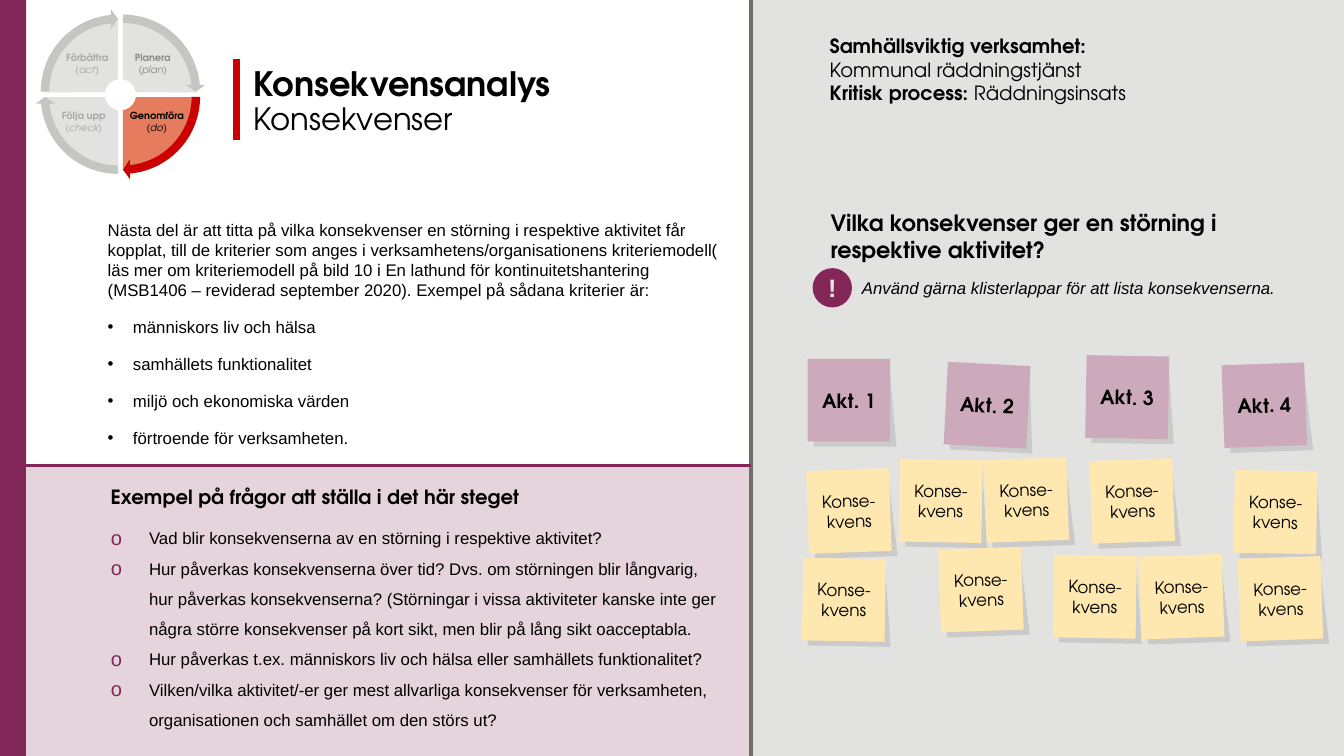
import math

import lxml.etree
import pptx
import pptx.dml.color
import pptx.enum.shapes
import pptx.enum.text
import pptx.oxml.ns
import pptx.util

Inches = pptx.util.Inches
SHAPES = pptx.enum.shapes.MSO_SHAPE
CENTER = pptx.enum.text.PP_ALIGN.CENTER
DISPLAY, BODY = "TeX Gyre Adventor", "Arial"
PLUM, RED, PALE, BLACK = "822757", "CC0000", "E2E2E1", "000000"
BOLD, PLAIN, ITALIC = (True, False), (False, False), (False, True)


def color(hex_value):
    """Turn a hex string into a colour."""
    return pptx.dml.color.RGBColor.from_string(hex_value)


def add_element(parent, tag, **attributes):
    """Append a drawing element to its parent."""
    element = lxml.etree.SubElement(parent, pptx.oxml.ns.qn(tag))
    for name, value in attributes.items():
        element.set(name, str(value))
    return element


def paint(shape, fill, opacity=100):
    """Give a shape a flat fill without line or shadow."""
    shape.shadow.inherit = False
    shape.line.fill.background()
    shape.fill.solid()
    shape.fill.fore_color.rgb = color(fill)
    if opacity < 100:
        value = shape._element.spPr.find(".//" + pptx.oxml.ns.qn("a:srgbClr"))
        add_element(value, "a:alpha", val=opacity * 1000)


def add_block(shapes, kind, box, fill):
    """Add a flat preset shape."""
    shape = shapes.add_shape(kind, *map(Inches, box))
    paint(shape, fill)
    return shape


def add_outline(shapes, points, fill, opacity=100):
    """Add a flat closed polygon through points in inches."""
    corners = [(Inches(x), Inches(y)) for x, y in points]
    builder = shapes.build_freeform(*corners[0])
    builder.add_line_segments(corners[1:], close=True)
    shape = builder.convert_to_shape()
    paint(shape, fill, opacity)
    return shape


def add_line(slide, start, end, stroke, width):
    """Add a straight line without shadow."""
    line = slide.shapes.add_connector(
        pptx.enum.shapes.MSO_CONNECTOR.STRAIGHT, *map(Inches, start + end))
    line.line.color.rgb = color(stroke)
    line.line.width = pptx.util.Pt(width)
    add_element(line._element.spPr, "a:effectLst")


def add_bullet(paragraph, character, indent, bullet_color=None, percent=100):
    """Give a paragraph a hanging bullet."""
    properties = paragraph._p.get_or_add_pPr()
    properties.set("marL", str(Inches(indent)))
    properties.set("indent", str(-Inches(indent)))
    if bullet_color:
        add_element(add_element(properties, "a:buClr"), "a:srgbClr", val=bullet_color)
    add_element(properties, "a:buSzPct", val=percent * 1000)
    add_element(properties, "a:buFont", typeface=BODY)
    add_element(properties, "a:buChar", char=character)


def add_paragraph(frame, runs, size, font=DISPLAY, text_color=BLACK, align=None,
                  spacing=None, after=0, bullet=None):
    """Write a paragraph of (text, style) or (text, style, size) runs."""
    first = frame.paragraphs[0]
    paragraph = frame.add_paragraph() if first.runs else first
    if bullet:
        add_bullet(paragraph, *bullet)
    paragraph.alignment = align
    paragraph.line_spacing = spacing
    paragraph.space_after = pptx.util.Pt(after)
    for text, (bold, italic), *own_size in runs:
        for index, line in enumerate(text.split("\n")):
            if index:
                paragraph.add_line_break()
            if not line:
                continue
            run = paragraph.add_run()
            run.text = line
            run.font.name = font
            run.font.size = pptx.util.Pt(own_size[0] if own_size else size)
            run.font.bold, run.font.italic = bold, italic
            run.font.color.rgb = color(text_color)


def add_text_frame(shapes, box, wrap=True):
    """Add a text box and return its frame."""
    frame = shapes.add_textbox(*map(Inches, box)).text_frame
    frame.word_wrap = wrap
    return frame


def center_frame(shape, margins=None):
    """Return the frame of a shape with text in its middle."""
    frame = shape.text_frame
    frame.word_wrap = True
    frame.vertical_anchor = pptx.enum.text.MSO_ANCHOR.MIDDLE
    if margins:
        frame.margin_left = frame.margin_right = Inches(margins[0])
        frame.margin_top = frame.margin_bottom = Inches(margins[1])
    return frame


def add_note(slide, left, top, rotation, label, fill, size, style):
    """Add a tilted sticky note with its soft shadow."""
    group = slide.shapes.add_group_shape()
    corners = [(0, 0), (0.75, 0), (0.82, 0.82), (0, 0.82)]
    shade = add_outline(
        group.shapes, [(left + 0.06 + x, top + 0.05 + y) for x, y in corners], BLACK, 10)
    note = add_block(group.shapes, SHAPES.RECTANGLE, (left, top, 0.82, 0.82), fill)
    shade.rotation = note.rotation = rotation
    margins = (0, 0.05) if style == PLAIN else None
    add_paragraph(center_frame(note, margins), [(label, style)], size, align=CENTER)


def add_cycle(slide, left, top):
    """Draw the four-step wheel with the current step highlighted."""
    shapes = slide.shapes.add_group_shape().shapes
    center_x, center_y = left + 0.845, top + 0.85
    steps = [
        (-1, -1, PALE, "C5C5C2", 108, "Förbättra", "act", "A9A8A4", 0.2, 0.39, 0.63),
        (-1, 1, PALE, "C5C5C2", 54, "Följa upp", "check", "A9A8A4", 0.16, 0.96, 0.64),
        (1, -1, PALE, "C5C5C2", 162, "Planera", "plan", "8C8B85", 0.8, 0.39, 0.73),
        (1, 1, "E67C5E", RED, 0, "Genomföra", "do", BLACK, 0.83, 0.96, 0.75),
    ]
    for side_x, side_y, fill, *rest in steps:
        def arc(radius, gap, degrees):
            return [(center_x + side_x * (gap + radius * math.cos(math.radians(angle))),
                     center_y + side_y * (gap + radius * math.sin(math.radians(angle))))
                    for angle in degrees]
        add_outline(shapes, arc(0.73, 0.024, range(0, 91, 3))
                    + arc(0.155, 0, range(81, 8, -6)), fill)
    for side_x, side_y, fill, arrow_fill, start, *rest in steps:
        box = (left + 0.025 + side_x * 0.025, top + 0.025 + side_y * 0.025, 1.64, 1.64)
        arrow = add_block(shapes, SHAPES.CIRCULAR_ARROW, box, arrow_fill)
        for index, value in enumerate((0.051, 3.275, start + 50.725, start, 0.059)):
            arrow.adjustments[index] = value
    for *rest, name, term, text_color, text_left, text_top, width in steps:
        frame = add_text_frame(shapes, (left + text_left, top + text_top, width, 0.33), False)
        style = dict(size=7, text_color=text_color, align=CENTER, spacing=0.9, after=1)
        add_paragraph(frame, [(name, BOLD)], **style)
        add_paragraph(frame, [(f"({term})", ITALIC)], **style)


def add_heading(slide, left, top):
    """Write the title beside its red bar."""
    add_line(slide, (left, top), (left, top + 0.8), RED, 5)
    frame = add_text_frame(slide.shapes, (left + 0.07, top + 0.03, 4.23, 0.83))
    add_paragraph(frame, [("Konsekvensanalys\n", BOLD), ("Konsekvenser", PLAIN, 22)],
                  24, spacing=0.9)


def add_introduction(slide, left, top):
    """Write the introduction and its list of criteria."""
    frame = add_text_frame(slide.shapes, (left, top, 6.29, 2.39))
    introduction = (
        "Nästa del är att titta på vilka konsekvenser en störning i respektive aktivitet får "
        "kopplat, till de kriterier som anges i verksamhetens/organisationens kriteriemodell( "
        "läs mer om kriteriemodell på bild 10 i En lathund för kontinuitetshantering "
        "(MSB1406 – reviderad september 2020). Exempel på sådana kriterier är:")
    add_paragraph(frame, [(introduction, PLAIN)], 12, BODY, after=12)
    for criterion in ("människors liv och hälsa", "samhällets funktionalitet",
                      "miljö och ekonomiska värden", "förtroende för verksamheten."):
        add_paragraph(frame, [(criterion, PLAIN)], 12, BODY, after=12, bullet=("•", 0.25))


def add_questions(slide, left, top):
    """Draw the panel of example questions."""
    add_block(slide.shapes, SHAPES.RECTANGLE, (left, top, 7.2, 2.87), "E6D4DD")
    frame = add_text_frame(slide.shapes, (left + 0.74, top + 0.13, 4.3, 0.34), False)
    add_paragraph(frame, [("Exempel på frågor att ställa i det här steget", BOLD)], 14)
    frame = add_text_frame(slide.shapes, (left + 0.74, top + 0.46, 6.28, 2.22))
    for question in (
            "Vad blir konsekvenserna av en störning i respektive aktivitet?",
            "Hur påverkas konsekvenserna över tid? Dvs. om störningen blir långvarig, hur "
            "påverkas konsekvenserna? (Störningar i vissa aktiviteter kanske inte ger några "
            "större konsekvenser på kort sikt, men blir på lång sikt oacceptabla.",
            "Hur påverkas t.ex. människors liv och hälsa eller samhällets funktionalitet?",
            "Vilken/vilka aktivitet/-er ger mest allvarliga konsekvenser för verksamheten, "
            "organisationen och samhället om den störs ut?"):
        add_paragraph(frame, [(question, PLAIN)], 12, BODY, spacing=1.5,
                      bullet=("o", 0.38, PLUM, 120))


def add_exercise(slide, left, top):
    """Write the exercise texts and stick up its notes."""
    frame = add_text_frame(slide.shapes, (left + 0.68, top + 0.29, 3.97, 0.81))
    add_paragraph(frame, [
        ("Samhällsviktig verksamhet:\n", BOLD), ("Kommunal räddningstjänst\n", PLAIN),
        ("Kritisk process: ", BOLD), ("Räddningsinsats", PLAIN)], 14)
    frame = add_text_frame(slide.shapes, (left + 0.69, top + 2.03, 4.4, 0.64))
    add_paragraph(
        frame, [("Vilka konsekvenser ger en störning i respektive aktivitet?", BOLD)], 16)
    frame = add_text_frame(slide.shapes, (left + 1, top + 2.71, 4.8, 0.3))
    add_paragraph(
        frame, [("Använd gärna klisterlappar för att lista konsekvenserna.", ITALIC)], 12, BODY)
    badge = add_block(slide.shapes, SHAPES.OVAL, (left + 0.61, top + 2.66, 0.39, 0.39), PLUM)
    add_paragraph(center_frame(badge, (0, 0)), [("!", BOLD)], 18, BODY, "E7E6E6", CENTER)
    consequences = [
        (0.56, 4.66, 358), (0.51, 5.54, 1), (3.37, 4.56, 358), (3, 5.51, 1),
        (3.86, 5.51, 358), (4.79, 4.67, 1), (4.84, 5.53, 358),
        (1.47, 4.56, 1), (2.32, 4.55, 358), (1.87, 5.44, 358)]
    for x, y, rotation in consequences:
        add_note(slide, left + x, top + y, rotation, "Konse-\nkvens", "FEE8B0", 12, PLAIN)
    activities = [(0.56, 3.56, 0), (1.93, 3.61, 3), (3.32, 3.53, 1), (4.68, 3.61, 358)]
    for number, (x, y, rotation) in enumerate(activities, 1):
        add_note(slide, left + x, top + y, rotation, f"Akt. {number}", "CDA9BC", 14, BOLD)


def main():
    """Build the slide and save it."""
    presentation = pptx.Presentation()
    presentation.slide_width, presentation.slide_height = Inches(13.33), Inches(7.5)
    slide = presentation.slides.add_slide(presentation.slide_layouts[6])
    add_block(slide.shapes, SHAPES.RECTANGLE, (0, 0, 0.26, 7.5), PLUM)
    add_block(slide.shapes, SHAPES.RECTANGLE, (7.45, 0, 5.88, 7.5), PALE)
    add_heading(slide, 2.35, 0.59)
    add_introduction(slide, 0.97, 2.13)
    add_questions(slide, 0.26, 4.63)
    add_line(slide, (7.45, 0), (7.45, 7.5), "6F6E67", 2.5)
    add_line(slide, (0.26, 4.62), (7.45, 4.62), PLUM, 2.5)
    add_exercise(slide, 7.45, 0)
    add_cycle(slide, 0.35, 0.09)
    presentation.save("out.pptx")


if __name__ == "__main__":
    main()
